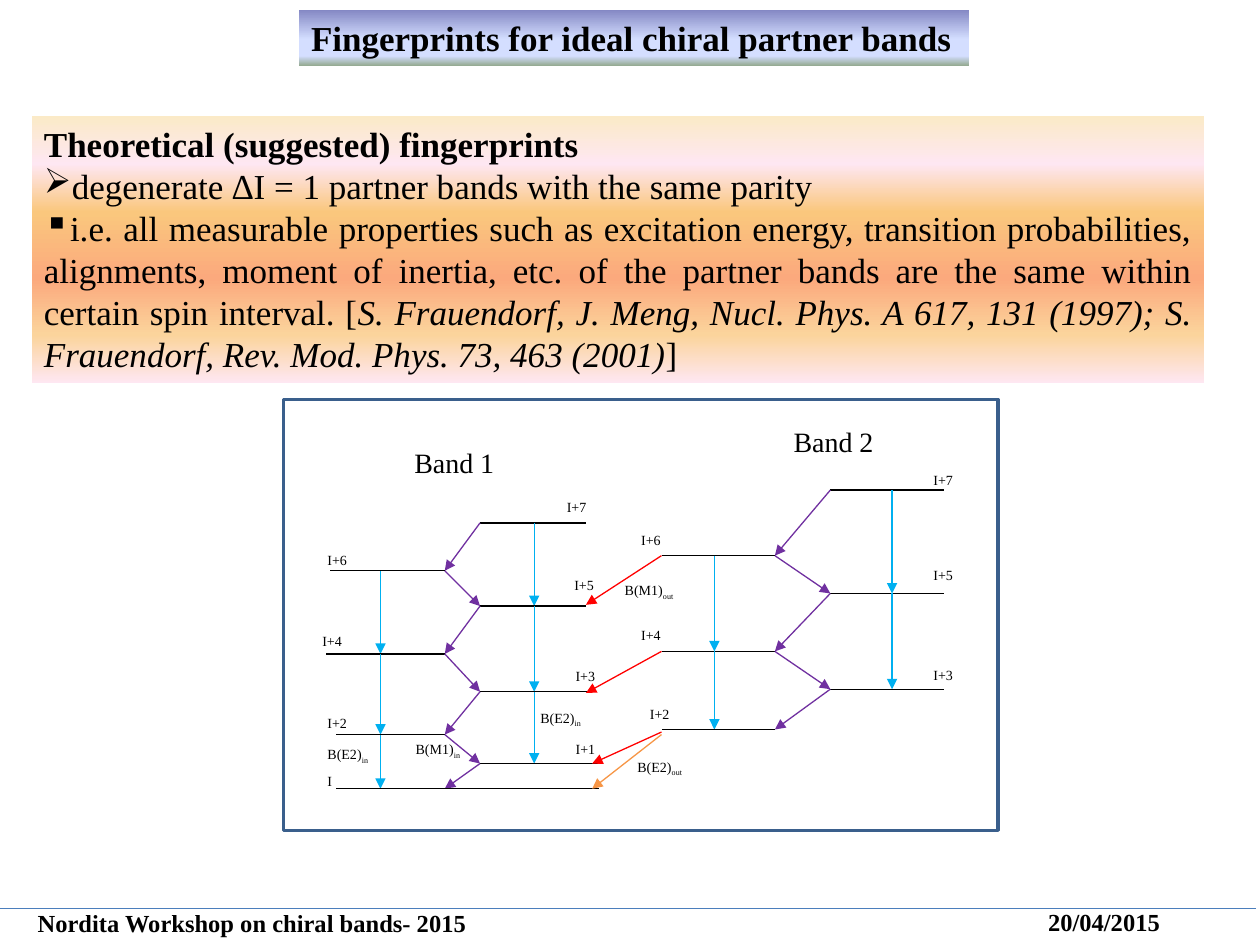
"""Build the slide on fingerprints for ideal chiral partner bands."""
from copy import deepcopy
from dataclasses import dataclass

from lxml import etree
from pptx import Presentation
from pptx import util as u
from pptx.dml.color import RGBColor
from pptx.enum import shapes, text
from pptx.oxml.ns import qn


@dataclass(frozen=True)
class Theme:
    font: str = "Times New Roman"
    ink: str = "000000"
    paper: str = "FFFFFF"
    stretched: str = "00B0F0"
    dipole: str = "7030A0"
    dipole_out: str = "FF0000"
    stretched_out: str = "F79646"
    frame: str = "3A5F8C"
    rule: str = "4B7EBC"
    heading_fill: tuple = ((0, "8488C4"), (53, "D4DEFF"), (83, "D4DEFF"), (100, "96AB94"))
    theory_fill: tuple = ((0, "FBEAC7"), (18, "FEE7F2"), (36, "FAC77D"),
                          (61, "FBA97D"), (82, "FBD49C"), (100, "FEE7F2"))
    body_size: int = 20
    band_size: int = 16
    footer_size: int = 14
    label_size: int = 8
    thin: float = 0.75
    thick: float = 2


THEME = Theme()

HEADING = "Fingerprints for ideal chiral partner bands"
THEORY = [
    ("", [("Theoretical (suggested) fingerprints", "bold")]),
    ("➢", [("degenerate ∆I = 1 partner bands with the same parity", "")]),
    ("▪", [
        ("i.e. all measurable properties such as excitation energy, transition "
         "probabilities, alignments, moment of inertia, etc. of the partner bands "
         "are the same within certain spin interval. [", ""),
        ("S. Frauendorf, J. Meng, Nucl. Phys. A 617, 131 (1997); "
         "S. Frauendorf, Rev. Mod. Phys. 73, 463 (2001)", "italic"),
        ("]", ""),
    ]),
]
FOOTERS = [
    ("Nordita Workshop on chiral bands- 2015", (0.2, 7.16, 4.58, 0.34)),
    ("20/04/2015", (8.22, 7.15, 1.2, 0.34)),
]
BAND_NAMES = [("Band 1", (3.19, 3.49, 1.08, 0.37)), ("Band 2", (6.2, 3.32, 1.08, 0.37))]

LABELS = [
    ("B(E2)", "in", (4.19, 5.58, 0.61, 0.39)),
    ("B(E2)", "in", (2.5, 5.87, 0.61, 0.39)),
    ("B(M1)", "in", (3.2, 5.83, 0.61, 0.31)),
    ("I+6", "", (2.5, 4.33, 0.4, 0.34)),
    ("I+7", "", (4.4, 3.91, 0.4, 0.34)),
    ("I+4", "", (2.46, 4.97, 0.44, 0.27)),
    ("I+2", "", (2.5, 5.62, 0.4, 0.25)),
    ("I+1", "", (4.47, 5.83, 0.39, 0.27)),
    ("I+5", "", (4.46, 4.53, 0.4, 0.34)),
    ("I+3", "", (4.47, 5.25, 0.44, 0.3)),
    ("I", "", (2.5, 6.08, 0.28, 0.27)),
    ("B(E2)", "out", (4.96, 5.97, 0.61, 0.39)),
    ("B(M1)", "out", (4.86, 4.57, 0.66, 0.3)),
    ("I+7", "", (7.31, 3.69, 0.4, 0.25)),
    ("I+6", "", (4.99, 4.17, 0.4, 0.25)),
    ("I+3", "", (7.31, 5.24, 0.4, 0.25)),
    ("I+2", "", (5.06, 5.55, 0.4, 0.25)),
    ("I+4", "", (4.99, 4.92, 0.4, 0.25)),
    ("I+5", "", (7.31, 4.45, 0.4, 0.25)),
]

BANDS = [
    {"inner": (3.81, 3.53), "decay": (4.24, 3.02),
     "levels": [(4.15, 4.65), (4.53, 2.62), (4.81, 4.65), (5.19, 2.59),
                (5.49, 4.7), (5.83, 2.67), (6.06, 4.75), (6.26, 2.67)]},
    {"inner": (6.59, 6.15), "decay": (7.08, 5.67),
     "levels": [(3.89, 7.49), (4.41, 5.25), (4.71, 7.49), (5.17, 5.25),
                (5.47, 7.49), (5.79, 5.25)]},
]
GROUND_EXTENSION = ((3.53, 6.26), (4.75, 6.26))
LINKING = [
    ((5.25, 5.81), (4.7, 6.06), THEME.dipole_out),
    ((5.25, 5.17), (4.65, 5.5), THEME.dipole_out),
    ((5.25, 4.41), (4.65, 4.8), THEME.dipole_out),
    ((5.25, 5.83), (4.7, 6.26), THEME.stretched_out),
]


def rgb(colour):
    return RGBColor.from_string(colour)


def add_words(paragraph, words, size, style="", subscript=False):
    run = paragraph.add_run()
    run.text = words
    font = run.font
    font.name, font.size = THEME.font, u.Pt(size)
    font.color.rgb = rgb(THEME.ink)
    font.bold, font.italic = style == "bold", style == "italic"
    if subscript:
        run._r.get_or_add_rPr().set("baseline", "-25000")


def add_note(slide, words, place, size, style=""):
    frame = slide.shapes.add_textbox(*map(u.Inches, place)).text_frame
    frame.word_wrap = True
    add_words(frame.paragraphs[0], words, size, style)


def add_panel(slide, place):
    panel = slide.shapes.add_shape(shapes.MSO_SHAPE.RECTANGLE, *map(u.Inches, place))
    panel.shadow.inherit = False
    panel.line.fill.background()
    panel.text_frame.vertical_anchor = text.MSO_ANCHOR.TOP
    panel.text_frame.paragraphs[0].alignment = text.PP_ALIGN.LEFT
    return panel


def shade(panel, stops):
    panel.fill.gradient()
    panel.fill.gradient_angle = 270
    stop_list = panel._element.spPr.find(qn("a:gradFill")).find(qn("a:gsLst"))
    for _ in stops[2:]:
        stop_list.append(deepcopy(stop_list[0]))
    for stop, (percent, colour) in zip(panel.fill.gradient_stops, stops):
        stop.position = percent / 100
        stop.color.rgb = rgb(colour)


def add_line(slide, start, end, colour, arrow=False):
    line = slide.shapes.add_connector(
        shapes.MSO_CONNECTOR.STRAIGHT, *map(u.Inches, (*start, *end)))
    line.line.color.rgb = rgb(colour)
    line.line.width = u.Pt(THEME.thin)
    if arrow:
        etree.SubElement(line.line._get_or_add_ln(), qn("a:tailEnd"), type="triangle")
    etree.SubElement(line._element.spPr, qn("a:effectLst"))


def add_theory(slide):
    panel = add_panel(slide, (0.25, 0.92, 9.31, 2.12))
    shade(panel, THEME.theory_fill)
    frame = panel.text_frame
    frame.word_wrap = True
    for index, (bullet, pieces) in enumerate(THEORY):
        paragraph = frame.add_paragraph() if index else frame.paragraphs[0]
        paragraph.alignment = text.PP_ALIGN.JUSTIFY
        if bullet:
            etree.SubElement(paragraph._p.get_or_add_pPr(), qn("a:buChar"), char=bullet)
        for words, style in pieces:
            add_words(paragraph, words, THEME.body_size, style)


def add_label(slide, words, subscript, place):
    label = add_panel(slide, place)
    label.fill.solid()
    label.fill.fore_color.rgb = rgb(THEME.paper)
    paragraph = label.text_frame.paragraphs[0]
    paragraph.space_after = u.Pt(10)
    add_words(paragraph, words, THEME.label_size)
    if subscript:
        add_words(paragraph, subscript, THEME.label_size, subscript=True)


def add_band(slide, band):
    levels = band["levels"]
    heights = [height for height, _ in levels]
    for index, (height, outer) in enumerate(levels):
        inner, decay = band["inner"][index % 2], band["decay"][index % 2]
        add_line(slide, (inner, height), (outer, height), THEME.ink)
        for lower in heights[index + 2:index + 3]:
            add_line(slide, (decay, height), (decay, lower), THEME.stretched, True)
        for lower in heights[index + 1:index + 2]:
            add_line(slide, (inner, height), (band["inner"][1 - index % 2], lower),
                     THEME.dipole, True)


def main():
    deck = Presentation()
    deck.slide_width, deck.slide_height = u.Inches(10), u.Inches(7.5)
    slide = deck.slides.add_slide(deck.slide_layouts[6])
    for words, place in FOOTERS:
        add_note(slide, words, place, THEME.footer_size, "bold")
    add_line(slide, (0, 7.21), (9.97, 7.21), THEME.rule)
    heading = add_panel(slide, (2.37, 0.08, 5.32, 0.44))
    shade(heading, THEME.heading_fill)
    heading.text_frame.word_wrap = False
    heading.text_frame.paragraphs[0].alignment = text.PP_ALIGN.JUSTIFY
    add_words(heading.text_frame.paragraphs[0], HEADING, THEME.body_size, "bold")
    add_theory(slide)
    for label in LABELS:
        add_label(slide, *label)
    for band in BANDS:
        add_band(slide, band)
    add_line(slide, *GROUND_EXTENSION, THEME.ink)
    for start, end, colour in LINKING:
        add_line(slide, start, end, colour, True)
    for words, place in BAND_NAMES:
        add_note(slide, words, place, THEME.band_size)
    border = add_panel(slide, (2.25, 3.17, 5.67, 3.42))
    border.fill.background()
    border.line.color.rgb = rgb(THEME.frame)
    border.line.width = u.Pt(THEME.thick)
    deck.save("out.pptx")


if __name__ == "__main__":
    main()
